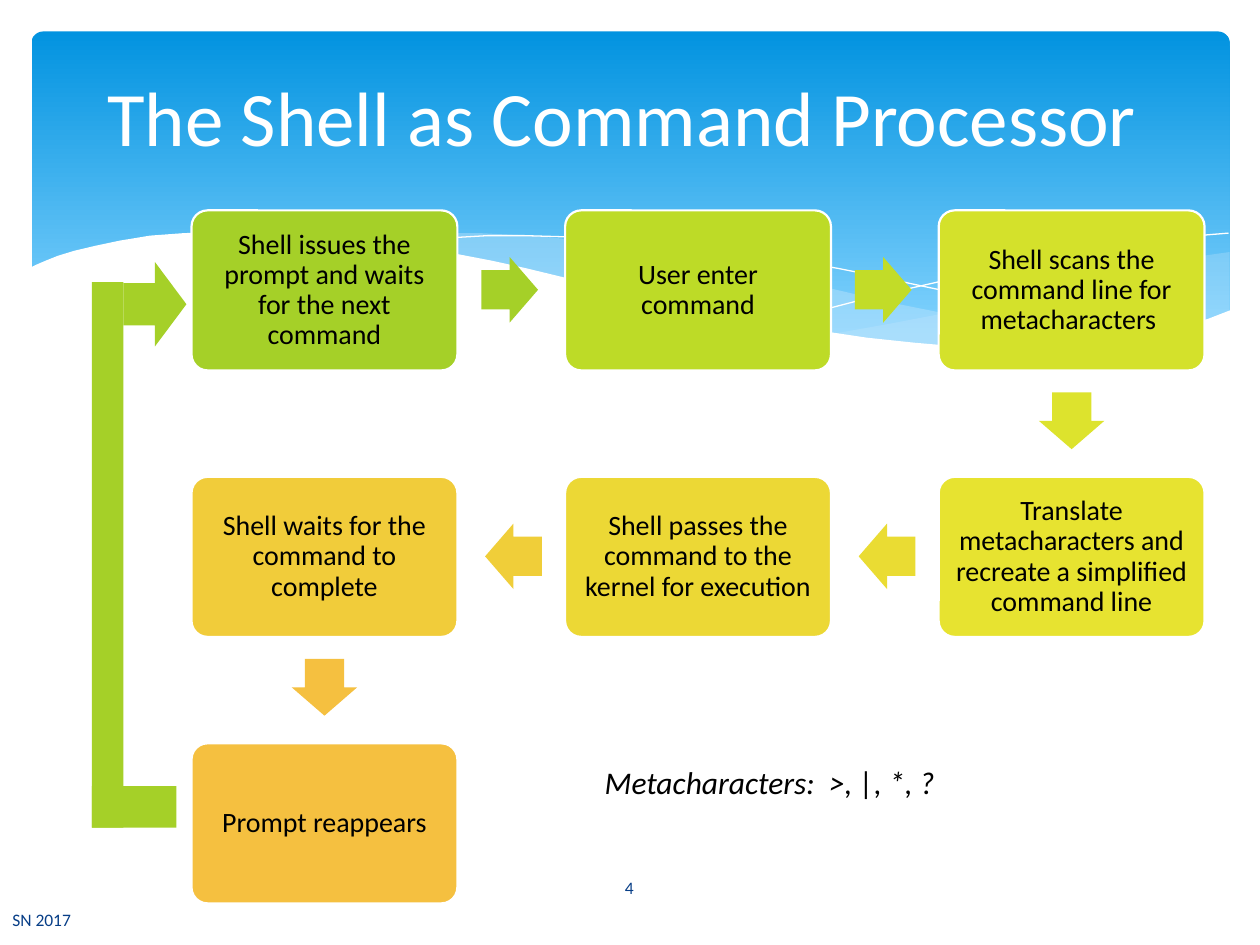
from lxml import etree
from pptx import Presentation
from pptx.dml.color import RGBColor
from pptx.enum.shapes import MSO_SHAPE
from pptx.enum.text import MSO_ANCHOR, PP_ALIGN
from pptx.oxml.ns import qn
from pptx.util import Inches, Pt

ROUNDED, RECT, ARROW = (MSO_SHAPE.ROUNDED_RECTANGLE, MSO_SHAPE.RECTANGLE,
                        MSO_SHAPE.RIGHT_ARROW)
TOP, MIDDLE = MSO_ANCHOR.TOP, MSO_ANCHOR.MIDDLE
LEFT, CENTER = PP_ALIGN.LEFT, PP_ALIGN.CENTER

FONT = "Calibri"
WHITE = RGBColor(0xFF, 0xFF, 0xFF)
BLACK = RGBColor(0x00, 0x00, 0x00)
NAVY = RGBColor(0x07, 0x3E, 0x87)
SKY_DARK = RGBColor(0x02, 0x93, 0xE0)
SKY_LIGHT = RGBColor(0x83, 0xD3, 0xFE)
PALE_BLUE = RGBColor(0xC6, 0xE7, 0xFC)
GREEN = RGBColor(0xA5, 0xD0, 0x28)
ORANGE = RGBColor(0xF5, 0xC0, 0x40)

BOX_W, BOX_H = 2.11, 1.27
BOX_X, BOX_Y = 1.52, 1.67
STEP_X, STEP_Y = 2.965, 2.115
ARROW_W, ARROW_H = 0.45, 0.52

# column, row, box colour, text
STEPS = [
    (0, 0, GREEN, "Shell issues the prompt and waits for the next command"),
    (1, 0, RGBColor(0xBD, 0xDB, 0x27), "User enter command"),
    (2, 0, RGBColor(0xD4, 0xE1, 0x2B),
     "Shell scans the command line for metacharacters "),
    (2, 1, RGBColor(0xE7, 0xE3, 0x30),
     "Translate metacharacters and recreate a simplified command line"),
    (1, 1, RGBColor(0xEC, 0xD8, 0x35),
     "Shell passes the command to the kernel for execution"),
    (0, 1, RGBColor(0xF1, 0xCC, 0x3A), "Shell waits for the command to complete"),
    (0, 2, ORANGE, "Prompt reappears"),
]
ARROW_COLORS = [GREEN, RGBColor(0xC2, 0xDC, 0x28), RGBColor(0xDD, 0xE3, 0x2D),
                RGBColor(0xEA, 0xDC, 0x33), RGBColor(0xF0, 0xCE, 0x39), ORANGE]

RIGHT_WAVE = [
    (9.76, 2), (9.48, 2.04), (9.21, 2.1), (8.91, 2.16), (8.61, 2.23),
    (8.05, 2.37), (7.53, 2.48), (7.06, 2.57), (6.61, 2.65), (6.91, 2.69),
    (7.19, 2.72), (7.45, 2.75), (7.69, 2.77), (8.03, 2.78), (8.35, 2.77),
    (8.63, 2.75), (8.89, 2.72), (9.13, 2.67), (9.35, 2.62), (9.49, 2.57),
    (9.63, 2.52), (9.76, 2.47)]
MIDDLE_WAVE = [
    (8.93, 2.73), (8.66, 2.69), (8.37, 2.65), (8.07, 2.6), (7.75, 2.54),
    (7.41, 2.47), (7.06, 2.4), (6.68, 2.31), (6.29, 2.22), (5.98, 2.14),
    (5.69, 2.08), (5.41, 2.03), (5.14, 1.98), (4.89, 1.94), (4.65, 1.91),
    (4.42, 1.89), (4.2, 1.87), (3.99, 1.86), (3.8, 1.85), (3.61, 1.85),
    (3.28, 1.87), (2.86, 1.91), (3.23, 1.96), (3.62, 2.03), (4.04, 2.11),
    (4.49, 2.22), (4.91, 2.32), (5.3, 2.4), (5.66, 2.48), (6.01, 2.55),
    (6.34, 2.61), (6.65, 2.66), (6.95, 2.7), (7.22, 2.74), (7.48, 2.76),
    (7.73, 2.77), (8.07, 2.78), (8.38, 2.78), (8.67, 2.76)]
FALLING_LINE = [
    (3.09, 1.95), (3.28, 1.92), (3.53, 1.89), (3.87, 1.87), (4.16, 1.87),
    (4.5, 1.88), (4.89, 1.9), (5.33, 1.94), (5.82, 2), (6.36, 2.08),
    (6.65, 2.13), (6.95, 2.19), (7.27, 2.26), (7.6, 2.33), (7.95, 2.41),
    (8.31, 2.51), (8.69, 2.61), (9.07, 2.72)]
RISING_LINE = [
    (6.13, 2.57), (6.53, 2.46), (6.95, 2.35), (7.48, 2.23), (8.06, 2.1),
    (8.36, 2.04), (8.66, 1.99), (8.95, 1.94), (9.24, 1.9), (9.51, 1.87),
    (9.75, 1.85)]
WHITE_WAVE = [
    (9.77, 2.46), (9.59, 2.53), (9.4, 2.59), (9.2, 2.65), (8.99, 2.69),
    (8.75, 2.73), (8.5, 2.75), (8.23, 2.77), (7.93, 2.76), (7.61, 2.75),
    (7.26, 2.72), (6.88, 2.68), (6.48, 2.62), (6.03, 2.54), (5.55, 2.45),
    (5.03, 2.33), (4.47, 2.2), (4.18, 2.13), (3.91, 2.07), (3.65, 2.02),
    (3.4, 1.97), (3.16, 1.94), (2.92, 1.9), (2.71, 1.88), (2.5, 1.86),
    (2.3, 1.85), (2.11, 1.84), (1.77, 1.84), (1.46, 1.85), (1.19, 1.87),
    (0.95, 1.91), (0.76, 1.95), (0.59, 1.99), (0.46, 2.03), (0.36, 2.07),
    (0.29, 2.1), (0.23, 2.13), (0.23, 3.29), (9.77, 3.29)]


def fill_solid(sp, color, alpha=None):
    """Fill without outline; alpha is the opacity in percent."""
    sp.shadow.inherit = False
    sp.line.fill.background()
    sp.fill.solid()
    sp.fill.fore_color.rgb = color
    if alpha is not None:
        srgb = sp._element.spPr.find(qn("a:solidFill")).find(qn("a:srgbClr"))
        etree.SubElement(srgb, qn("a:alpha"), val=str(alpha * 1000))


def add_block(s, kind, x, y, w, h, color, rotation=0):
    sp = s.shapes.add_shape(kind, Inches(x), Inches(y), Inches(w), Inches(h))
    fill_solid(sp, color)
    sp.rotation = rotation
    return sp


def add_outline(s, points, closed):
    (x, y), *rest = [(Inches(px), Inches(py)) for px, py in points]
    builder = s.shapes.build_freeform(x, y)
    builder.add_line_segments(rest, close=closed)
    return builder.convert_to_shape()


def add_wave(s, points, color, alpha=None):
    fill_solid(add_outline(s, points, True), color, alpha)


def add_curve(s, points):
    sp = add_outline(s, points, False)
    sp.shadow.inherit = False
    sp.fill.background()
    sp.line.color.rgb = WHITE
    sp.line.width = Pt(0)


def add_banner(s):
    sp = add_block(s, ROUNDED, 0.25, 0.25, 9.51, 2.7, SKY_DARK)
    sp.adjustments[0] = 0.034
    sp.fill.gradient()
    sp.fill.gradient_angle = 270
    stops = sp.fill.gradient_stops
    for stop, position, color in zip(stops, (0, 0.9), (SKY_DARK, SKY_LIGHT)):
        stop.position = position
        stop.color.rgb = color


def set_text(sp, text, size, color, align=LEFT, anchor=TOP, wrap=True):
    tf = sp.text_frame
    tf.text = text
    tf.word_wrap = wrap
    tf.vertical_anchor = anchor
    p = tf.paragraphs[0]
    p.alignment = align
    font = p.runs[0].font
    font.name, font.size, font.color.rgb = FONT, Pt(size), color
    return p


def add_label(s, x, y, w, h, *args, **kwargs):
    sp = s.shapes.add_textbox(Inches(x), Inches(y), Inches(w), Inches(h))
    return set_text(sp, *args, **kwargs)


def add_step(s, x, y, color, text):
    sp = add_block(s, ROUNDED, x, y, BOX_W, BOX_H, color)
    sp.adjustments[0] = 0.1
    sp.line.color.rgb = WHITE
    sp.line.width = Pt(1.25)
    p = set_text(sp, text, 16, BLACK, CENTER, MIDDLE)
    p.line_spacing = 0.9
    tf = sp.text_frame
    tf.margin_left = tf.margin_right = Inches(0.1)
    tf.margin_top = tf.margin_bottom = Inches(0.1)


def add_flow_arrow(s, here, there, color):
    """Place an arrow between two neighbouring grid cells (column, row)."""
    (c1, r1), (c2, r2) = here, there
    x, y = BOX_X + min(c1, c2) * STEP_X, BOX_Y + r1 * STEP_Y
    if r2 > r1:
        x, y, rotation = x + (BOX_W - ARROW_W) / 2, y + 1.41, 90
    elif c2 > c1:
        x, y, rotation = x + 2.3, y + 0.37, 0
    else:
        x, y, rotation = x + 2.33, y + 0.37, 180
    sp = add_block(s, ARROW, x, y, ARROW_W, ARROW_H, color, rotation)
    sp.adjustments[0] = 0.6


def add_title(s, text):
    title = s.shapes.title
    title.left, title.top = Inches(0.75), Inches(0.5)
    title.width, title.height = Inches(8.77), Inches(0.84)
    set_text(title, text, 44, WHITE, wrap=False)
    s.shapes._spTree.append(title._element)  # bring in front of the banner


def main():
    prs = Presentation()
    prs.slide_width, prs.slide_height = Inches(10), Inches(7.5)
    s = prs.slides.add_slide(prs.slide_layouts[5])

    add_banner(s)
    add_wave(s, RIGHT_WAVE, PALE_BLUE, 29)
    add_wave(s, MIDDLE_WAVE, PALE_BLUE, 40)
    add_curve(s, FALLING_LINE)
    add_curve(s, RISING_LINE)
    add_wave(s, WHITE_WAVE, WHITE)

    for col, row, color, text in STEPS:
        add_step(s, BOX_X + col * STEP_X, BOX_Y + row * STEP_Y, color, text)
    for here, there, color in zip(STEPS, STEPS[1:], ARROW_COLORS):
        add_flow_arrow(s, here[:2], there[:2], color)

    add_block(s, ARROW, 0.98, 2.08, 0.5, 0.67, GREEN)
    add_block(s, RECT, 0.73, 2.24, 0.25, 4.33, GREEN)
    add_block(s, RECT, 0.73, 6.24, 0.67, 0.33, GREEN)

    add_label(s, 4.36, 6.84, 1.27, 0.4, "4", 10, NAVY, CENTER, MIDDLE)
    p = add_label(s, 4.7, 6.01, 2.99, 0.4, "Metacharacters:  >, |, *, ?", 18,
                  BLACK, wrap=False)
    p.runs[0].font.italic = True
    add_title(s, "The Shell as Command Processor")
    add_label(s, 0, 7.1, 4.14, 0.4, "SN 2017", 10, NAVY, anchor=MIDDLE)
    prs.save("out.pptx")


if __name__ == "__main__":
    main()
